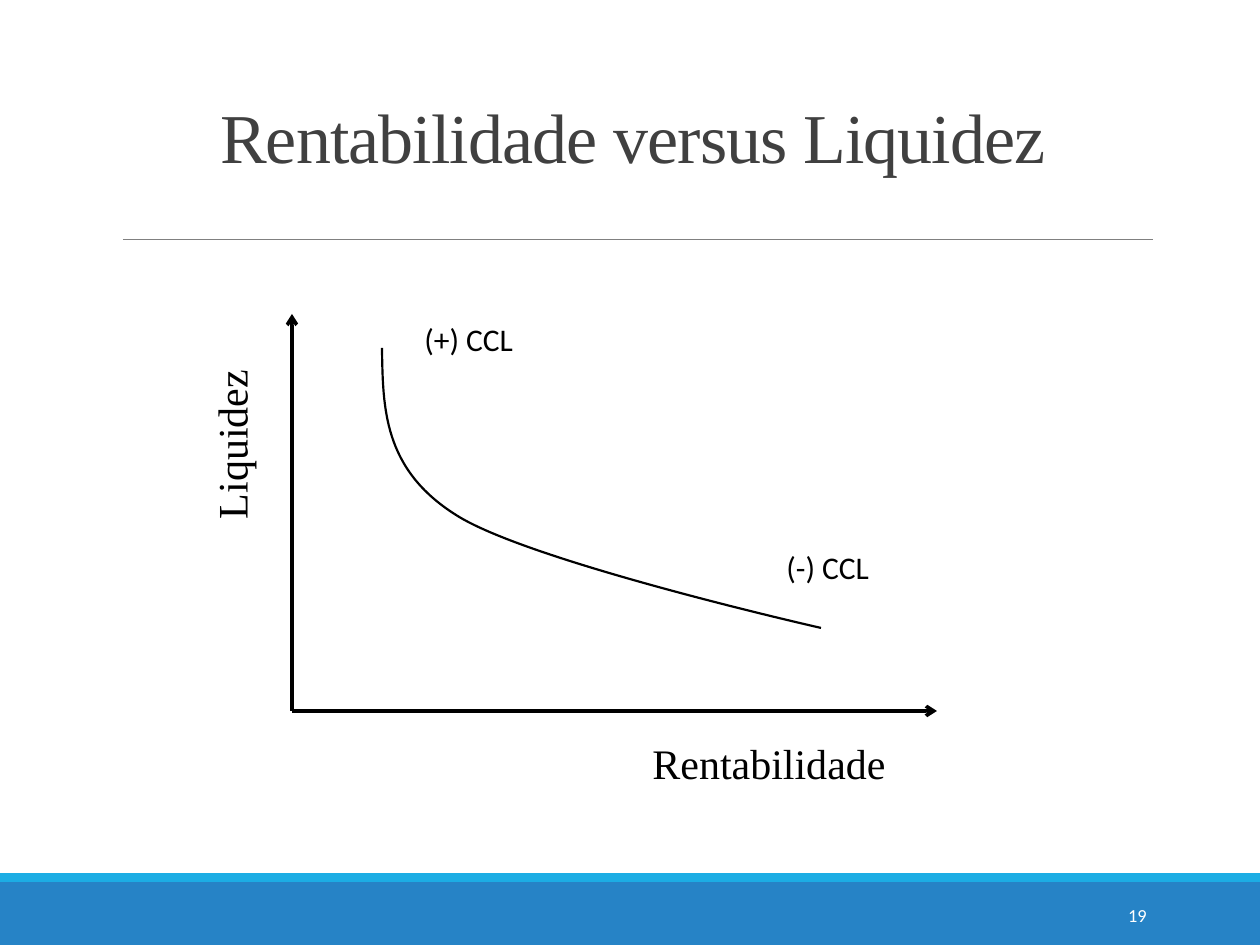
import pptx
import pptx.util
import pptx.dml.color
import pptx.enum.shapes
import pptx.enum.text
import pptx.oxml.ns
import lxml.etree

RGBColor = pptx.dml.color.RGBColor
Align = pptx.enum.text.PP_ALIGN
Anchor = pptx.enum.text.MSO_ANCHOR
qn = pptx.oxml.ns.qn

BLACK = RGBColor(0x00, 0x00, 0x00)
WHITE = RGBColor(0xFF, 0xFF, 0xFF)
GRAY = RGBColor(0x80, 0x80, 0x80)
TITLE_GRAY = RGBColor(0x40, 0x40, 0x40)
BLUE = RGBColor(0x26, 0x83, 0xC6)
LIGHT_BLUE = RGBColor(0x1C, 0xAD, 0xE4)
SERIF, SANS = "Times New Roman", "Calibri"
EMU_PER_PX = 914400 / 126


def px(*lengths):
    return [pptx.util.Emu(round(length * EMU_PER_PX)) for length in lengths]


def write(shape, text, font, size, color, align=Align.LEFT, anchor=Anchor.TOP):
    frame = shape.text_frame
    frame.word_wrap = True
    frame.vertical_anchor = anchor
    paragraph = frame.paragraphs[0]
    paragraph.alignment = align
    run = paragraph.add_run()
    run.text = text
    run.font.name = font
    run.font.size = pptx.util.Pt(size)
    run.font.color.rgb = color
    return paragraph, run


presentation = pptx.Presentation()
presentation.slide_width, presentation.slide_height = px(1260, 945)
slide = presentation.slides.add_slide(presentation.slide_layouts[5])
shapes = slide.shapes

# Footer bands
for top, height, color in ((882, 63, BLUE), (873, 9, LIGHT_BLUE)):
    band = shapes.add_shape(pptx.enum.shapes.MSO_SHAPE.RECTANGLE, *px(0, top, 1260, height))
    band.shadow.inherit = False
    band.fill.solid()
    band.fill.fore_color.rgb = color
    band.line.fill.background()

# Title
title = shapes.title
title.left, title.top, title.width, title.height = px(113, 39, 1040, 145)
paragraph, run = write(title, "Rentabilidade versus Liquidez", SERIF, 40, TITLE_GRAY,
                       Align.CENTER, Anchor.BOTTOM)
title.text_frame.auto_size = pptx.enum.text.MSO_AUTO_SIZE.NONE
paragraph.line_spacing = 0.85
run.font._element.set("spc", "-50")

# Title rule and the two axes
for start, end, color, width, arrow in (
    ((123, 239), (1153, 239), GRAY, 0.5, False),
    ((292, 711), (292, 314), BLACK, 2, True),
    ((292, 711), (937, 711), BLACK, 2, True),
):
    line = shapes.add_connector(pptx.enum.shapes.MSO_CONNECTOR.STRAIGHT, *px(*start, *end))
    line.line.color.rgb = color
    line.line.width = pptx.util.Pt(width)
    if arrow:
        lxml.etree.SubElement(line.line._get_or_add_ln(), qn("a:tailEnd"), type="arrow")
    lxml.etree.SubElement(line._element.spPr, qn("a:effectLst"))

# Trade-off curve: a start point, then three points for each Bézier segment
curve_points = [(382, 348), (383, 408), (383, 469), (456, 515),
                (529, 562), (821, 628), (821, 628)]
builder = shapes.build_freeform(*curve_points[0], scale=EMU_PER_PX)
builder.add_line_segments(curve_points[1:], close=False)
curve = builder.convert_to_shape()
curve.shadow.inherit = False
curve.fill.background()
curve.line.color.rgb = BLACK
curve.line.width = pptx.util.Pt(1.25)
segments = list(curve._element.iter(qn("a:lnTo")))
outline = segments[0].getparent()
for first in range(0, len(segments), 3):
    bezier = lxml.etree.SubElement(outline, qn("a:cubicBezTo"))
    for segment in segments[first:first + 3]:
        bezier.append(segment[0])
        outline.remove(segment)

# Axis names, curve labels and slide number
for text, box, rotation, font, size, color, align, anchor in (
    ("Liquidez", (132, 401, 198, 63), 270, SERIF, 24, BLACK, Align.LEFT, Anchor.TOP),
    ("Rentabilidade", (640, 731, 268, 63), 0, SERIF, 24, BLACK, Align.LEFT, Anchor.TOP),
    ("(+) CCL", (412, 314, 149, 50), 0, SANS, 18, BLACK, Align.LEFT, Anchor.TOP),
    ("(-) CCL", (774, 542, 149, 50), 0, SANS, 18, BLACK, Align.LEFT, Anchor.TOP),
    ("19", (1023, 890, 136, 50), 0, SANS, 10.5, WHITE, Align.RIGHT, Anchor.MIDDLE),
):
    label = shapes.add_textbox(*px(*box))
    label.rotation = rotation
    write(label, text, font, size, color, align, anchor)

presentation.save("out.pptx")
